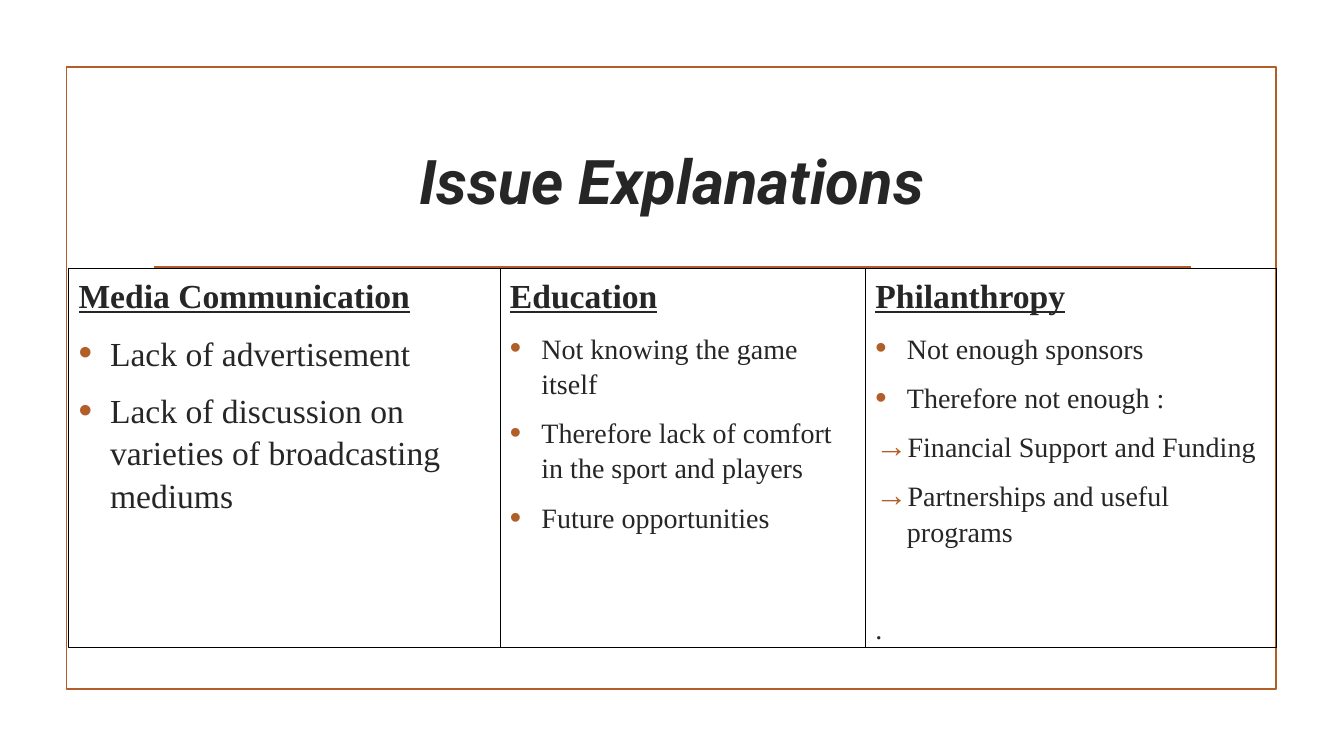
from dataclasses import dataclass

from lxml import etree
from pptx import Presentation
from pptx.dml.color import RGBColor
from pptx.enum.shapes import MSO_CONNECTOR, MSO_SHAPE
from pptx.enum.text import MSO_ANCHOR, PP_ALIGN
from pptx.oxml.ns import qn
from pptx.util import Pt

RECT = MSO_SHAPE.RECTANGLE
LINE = MSO_CONNECTOR.STRAIGHT
TOP, MIDDLE = MSO_ANCHOR.TOP, MSO_ANCHOR.MIDDLE
LEFT, CENTER = PP_ALIGN.LEFT, PP_ALIGN.CENTER


@dataclass(frozen=True)
class Theme:
    ink: str = "262626"
    accent: str = "B15E28"
    border: str = "000000"
    title_font: str = "Roboto"
    body_font: str = "Times New Roman"
    title: int = 44
    head: int = 24
    small: int = 20


class Deck:
    def __init__(self, theme, slide):
        self.theme = theme
        self.slide = slide

    def frame(self, left, top, width, height, color, weight):
        box = self.slide.shapes.add_shape(
            RECT, Pt(left), Pt(top), Pt(width), Pt(height))
        box.shadow.inherit = False
        box.fill.background()
        box.line.color.rgb = RGBColor.from_string(color)
        box.line.width = Pt(weight)
        return box

    def rule(self, left, right, top):
        line = self.slide.shapes.add_connector(
            LINE, Pt(left), Pt(top), Pt(right), Pt(top))
        line.line.color.rgb = RGBColor.from_string(self.theme.accent)
        line.line.width = Pt(1.25)
        etree.SubElement(line._element.spPr, qn("a:effectLst"))

    def title(self, text, left, top, width, height):
        box = self.slide.shapes.add_textbox(
            Pt(left), Pt(top), Pt(width), Pt(height))
        frame = box.text_frame
        frame.word_wrap = True
        frame.vertical_anchor = MIDDLE
        frame.text = text
        para = frame.paragraphs[0]
        para.alignment = CENTER
        self.style(para, self.theme.title_font, self.theme.title, bold=True)
        para.runs[0].font.italic = True

    def style(self, para, face, size, bold=False):
        for run in para.runs:
            font = run.font
            font.name, font.size, font.bold = face, Pt(size), bold
            font.color.rgb = RGBColor.from_string(self.theme.ink)

    def bullet(self, para, mark):
        props = para._p.get_or_add_pPr()
        props.set("marL", str(Pt(22.5)))
        props.set("indent", str(-Pt(22.5)))
        color = etree.SubElement(props, qn("a:buClr"))
        etree.SubElement(color, qn("a:srgbClr"), val=self.theme.accent)
        etree.SubElement(props, qn("a:buSzPct"), val="115000")
        etree.SubElement(props, qn("a:buFont"), typeface="Arial")
        etree.SubElement(props, qn("a:buChar"), char=mark)

    def column(self, left, top, width, height, head, items, size):
        """Items are (mark, text, space before as a share of the size)."""
        box = self.frame(left, top, width, height, self.theme.border, 0.75)
        frame = box.text_frame
        frame.word_wrap = True
        frame.vertical_anchor = TOP
        frame.text = "\n".join([head] + [text for _, text, _ in items])
        first, *rest = frame.paragraphs
        for para in frame.paragraphs:
            para.alignment = LEFT
            para.line_spacing = 1.05
            para.space_after = Pt(6)
        self.style(first, self.theme.body_font, self.theme.head, bold=True)
        first.runs[0].font.underline = True
        for para, (mark, _, gap) in zip(rest, items):
            para.space_before = Pt(gap * size)
            if mark:
                self.bullet(para, mark)
            self.style(para, self.theme.body_font, size)


def main():
    theme = Theme()
    prs = Presentation()
    prs.slide_width, prs.slide_height = Pt(960), Pt(540)
    deck = Deck(theme, prs.slides.add_slide(prs.slide_layouts[6]))

    # Border, rule and title
    deck.frame(47.5, 48, 864, 444, theme.accent, 1.25)
    deck.rule(110, 850.5, 190.8)
    deck.title("Issue Explanations", 102, 77, 756, 103)

    # Three adjoining columns: width, text size, heading, items
    dot, arrow, gap = "•", "→", 0.2
    columns = [
        (308.2, theme.head, "Media Communication", [
            (dot, "Lack of advertisement", gap),
            (dot, "Lack of discussion on varieties of broadcasting mediums",
             gap),
        ]),
        (261, theme.small, "Education", [
            (dot, "Not knowing the game itself", gap),
            (dot, "Therefore lack of comfort in the sport and players", gap),
            (dot, "Future opportunities", gap),
        ]),
        (293.8, theme.small, "Philanthropy", [
            (dot, "Not enough sponsors", gap),
            (dot, "Therefore not enough :", gap),
            (arrow, "Financial Support and Funding", gap),
            (arrow, "Partnerships and useful programs", gap),
            (None, ".", 1.9),
        ]),
    ]
    left = 49
    for width, size, head, items in columns:
        deck.column(left, 191.5, width, 271.4, head, items, size)
        left += width

    prs.save("out.pptx")


if __name__ == "__main__":
    main()
